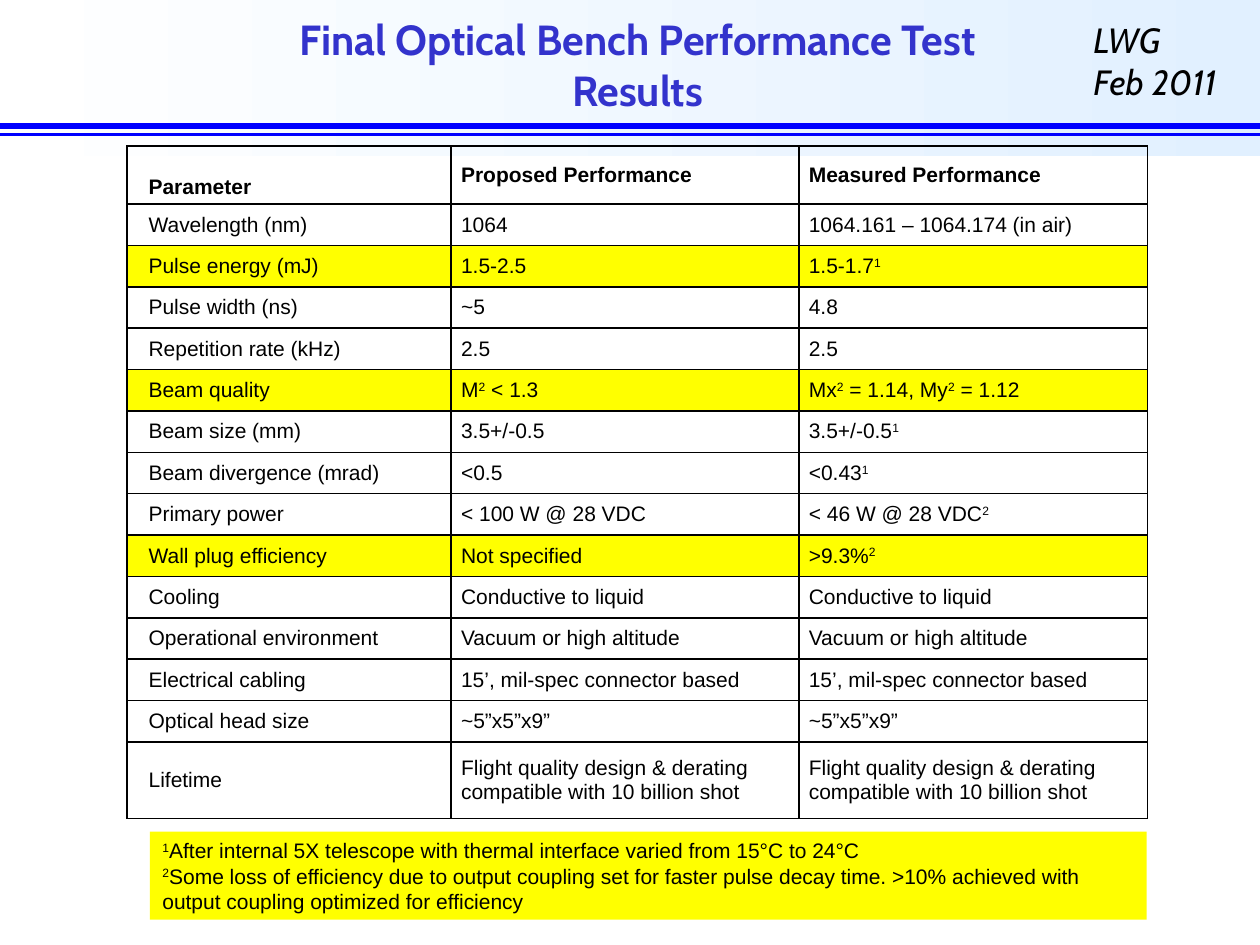
from typing import NamedTuple

from lxml import etree
from pptx import Presentation
from pptx.dml.color import RGBColor
from pptx.enum.shapes import MSO_CONNECTOR, MSO_SHAPE
from pptx.enum.text import MSO_ANCHOR, PP_ALIGN
from pptx.oxml.ns import qn
from pptx.util import Inches, Pt

STRAIGHT = MSO_CONNECTOR.STRAIGHT
RECTANGLE = MSO_SHAPE.RECTANGLE
TOP, MIDDLE = MSO_ANCHOR.TOP, MSO_ANCHOR.MIDDLE
LEFT, CENTER = PP_ALIGN.LEFT, PP_ALIGN.CENTER

BLACK, BLUE, YELLOW = "000000", "0000FF", "FFFF00"
TABLE_BOX = (1.01, 1.16, 8.1, 5.34)
COLUMN_WIDTHS = (2.57, 2.76, 2.77)
HEADER_HEIGHT, LAST_HEIGHT = 0.46, 0.61


class Row(NamedTuple):
    """One parameter with its proposed and measured values."""
    parameter: str
    proposed: str
    measured: str
    highlighted: bool = False


class Rule(NamedTuple):
    """A full-width line below the title."""
    top: float
    weight: float


RULES = (Rule(1, 4), Rule(1.07, 1.5))
LIFETIME = "Flight quality design & derating compatible with 10 billion shot"
ROWS = (
    Row("Parameter", "Proposed Performance", "Measured Performance"),
    Row("Wavelength (nm)", "1064", "1064.161 – 1064.174 (in air)"),
    Row("Pulse energy (mJ)", "1.5-2.5", "1.5-1.7^1^", True),
    Row("Pulse width (ns)", "~5", "4.8"),
    Row("Repetition rate (kHz)", "2.5", "2.5"),
    Row("Beam quality", "M^2^ < 1.3", "Mx^2^ = 1.14, My^2^ = 1.12", True),
    Row("Beam size (mm)", "3.5+/-0.5", "3.5+/-0.5^1^"),
    Row("Beam divergence (mrad)", "<0.5", "<0.43^1^"),
    Row("Primary power", "< 100 W @ 28 VDC", "< 46 W @ 28 VDC^2^"),
    Row("Wall plug efficiency", "Not specified", ">9.3%^2^", True),
    Row("Cooling", "Conductive to liquid", "Conductive to liquid"),
    Row("Operational environment", "Vacuum or high altitude", "Vacuum or high altitude"),
    Row("Electrical cabling", "15’, mil-spec connector based", "15’, mil-spec connector based"),
    Row("Optical head size", "~5”x5”x9”", "~5”x5”x9”"),
    Row("Lifetime", LIFETIME, LIFETIME),
)
FOOTNOTES = (
    "^1^After internal 5X telescope with thermal interface varied from 15°C to 24°C\n"
    "^2^Some loss of efficiency due to output coupling set for faster pulse decay time. "
    ">10% achieved with output coupling optimized for efficiency"
)


def rgb(color: str) -> RGBColor:
    """Turn a hex string into a colour."""
    return RGBColor.from_string(color)


def write_text(frame, text: str, *, size: float = 12, font: str = "Arial",
               color: str = BLACK, bold: bool = False, italic: bool = False,
               align=LEFT) -> None:
    """Write one paragraph per line, raising the parts between carets."""
    frame.word_wrap = True
    for index, line in enumerate(text.split("\n")):
        paragraph = frame.add_paragraph() if index else frame.paragraphs[0]
        paragraph.alignment = align
        for position, part in enumerate(line.split("^")):
            if not part:
                continue
            run = paragraph.add_run()
            run.text = part
            run.font.size, run.font.name = Pt(size), font
            run.font.bold, run.font.italic = bold, italic
            run.font.color.rgb = rgb(color)
            if position % 2:
                run.font._element.set("baseline", "30000")


def add_text_box(slide, box: tuple, text: str, **text_format) -> None:
    """Add a top-anchored text box."""
    shape = slide.shapes.add_textbox(*map(Inches, box))
    shape.text_frame.vertical_anchor = TOP
    write_text(shape.text_frame, text, **text_format)


def add_rectangle(slide, box: tuple):
    """Add a rectangle without outline or shadow."""
    shape = slide.shapes.add_shape(RECTANGLE, *map(Inches, box))
    shape.shadow.inherit = False
    shape.line.fill.background()
    return shape


def add_banner(slide) -> None:
    """Add the gradient band behind the title."""
    fill = add_rectangle(slide, (0, 0, 10, 1.24)).fill
    fill.gradient()
    fill.gradient_angle = 0
    for stop, color in zip(fill.gradient_stops, ("FFFFFF", "E1F0FF")):
        stop.color.rgb = rgb(color)


def add_rule(slide, rule: Rule) -> None:
    """Add a blue line across the slide."""
    connector = slide.shapes.add_connector(
        STRAIGHT, Inches(0), Inches(rule.top), Inches(10), Inches(rule.top))
    connector.line.color.rgb = rgb(BLUE)
    connector.line.width = Pt(rule.weight)
    etree.SubElement(connector._element.spPr, qn("a:effectLst"))


def add_borders(cell) -> None:
    """Give a cell a thin black border on each side."""
    properties = cell._tc.get_or_add_tcPr()
    for side in ("lnL", "lnR", "lnT", "lnB"):
        line = etree.SubElement(properties, qn(f"a:{side}"), w=str(Pt(1)))
        fill = etree.SubElement(line, qn("a:solidFill"))
        etree.SubElement(fill, qn("a:srgbClr"), val=BLACK)


def add_results_table(slide) -> None:
    """Add the table of proposed and measured performance."""
    table = slide.shapes.add_table(
        len(ROWS), len(COLUMN_WIDTHS), *map(Inches, TABLE_BOX)).table
    table.first_row = table.horz_banding = False
    for column, width in zip(table.columns, COLUMN_WIDTHS):
        column.width = Inches(width)
    body_height = (TABLE_BOX[3] - HEADER_HEIGHT - LAST_HEIGHT) / (len(ROWS) - 2)
    heights = [HEADER_HEIGHT, *[body_height] * (len(ROWS) - 2), LAST_HEIGHT]
    for row_index, (row, height) in enumerate(zip(ROWS, heights)):
        table.rows[row_index].height = Inches(height)
        for column_index, text in enumerate(row[:3]):
            cell = table.cell(row_index, column_index)
            add_borders(cell)
            if row.highlighted:
                cell.fill.solid()
                cell.fill.fore_color.rgb = rgb(YELLOW)
            else:
                cell.fill.background()
            cell.vertical_anchor = MIDDLE
            cell.margin_left = Inches(0.08 if column_index else 0.17)
            cell.margin_right = Inches(0.08)
            cell.margin_top = cell.margin_bottom = Inches(0)
            write_text(cell.text_frame, text, bold=row_index == 0)
    table.cell(0, 0).margin_top = Inches(0.19)


def add_footnotes(slide) -> None:
    """Add the yellow footnote panel."""
    shape = add_rectangle(slide, (1.19, 6.6, 7.91, 0.7))
    shape.fill.solid()
    shape.fill.fore_color.rgb = rgb(YELLOW)
    shape.text_frame.vertical_anchor = MIDDLE
    write_text(shape.text_frame, FOOTNOTES)


def main() -> None:
    """Build and save the slide."""
    presentation = Presentation()
    presentation.slide_width, presentation.slide_height = Inches(10), Inches(7.5)
    slide = presentation.slides.add_slide(presentation.slide_layouts[6])
    add_banner(slide)
    for rule in RULES:
        add_rule(slide, rule)
    add_text_box(slide, (8.58, 0.1, 1.42, 0.77), "LWG\nFeb 2011",
                 size=20, font="Cabin", italic=True)
    add_text_box(slide, (1.99, 0.06, 6.14, 0.86),
                 "Final Optical Bench Performance Test Results",
                 size=24, font="Cabin", color="3333CC", bold=True, align=CENTER)
    add_results_table(slide)
    add_footnotes(slide)
    presentation.save("out.pptx")


if __name__ == "__main__":
    main()
